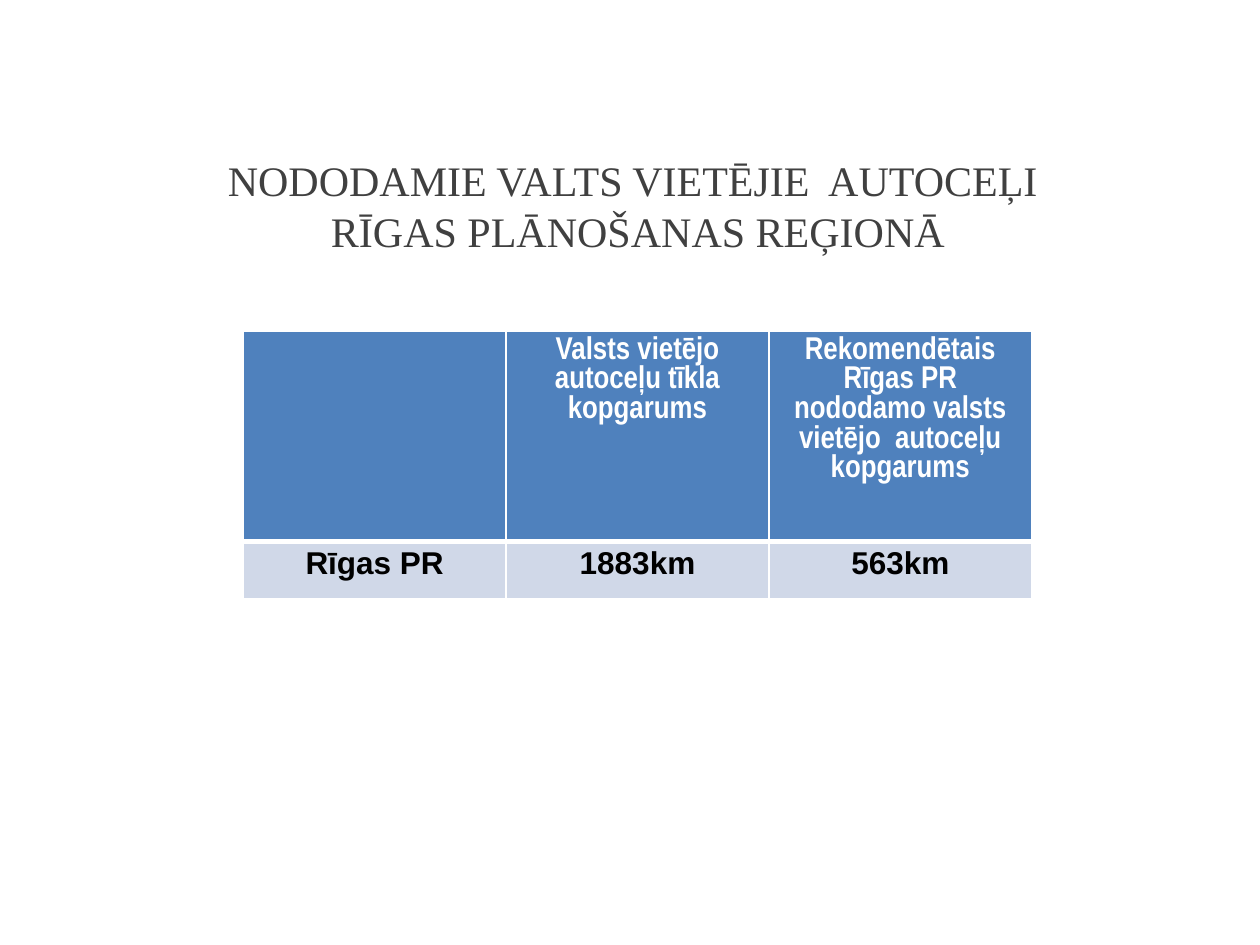
from lxml import etree
from pptx import Presentation
from pptx.dml.color import RGBColor
from pptx.enum import text
from pptx.oxml.ns import qn
from pptx.util import Pt

WHITE = RGBColor(0xFF, 0xFF, 0xFF)
BLACK = RGBColor(0, 0, 0)
GREY = RGBColor(0x40, 0x40, 0x40)
BLUE = RGBColor(0x4F, 0x81, 0xBD)
PALE_BLUE = RGBColor(0xD0, 0xD8, 0xE8)


def add_border(cell, side, width):
    line = etree.SubElement(cell._tc.get_or_add_tcPr(), qn("a:" + side), w=str(Pt(width)))
    fill = etree.SubElement(line, qn("a:solidFill"))
    etree.SubElement(fill, qn("a:srgbClr"), val=str(WHITE))


prs = Presentation()
prs.slide_width, prs.slide_height = Pt(720), Pt(540)
slide = prs.slides.add_slide(prs.slide_layouts[5])

# Title
title = slide.shapes.title
title.left, title.top, title.width, title.height = Pt(105), Pt(83.5), Pt(519), Pt(67.7)
title.text_frame.text = "NODODAMIE VALTS VIETĒJIE  AUTOCEĻI  RĪGAS PLĀNOŠANAS REĢIONĀ"
title.text_frame.vertical_anchor = text.MSO_ANCHOR.MIDDLE
heading = title.text_frame.paragraphs[0]
heading.alignment = text.PP_ALIGN.CENTER
heading.font.name = "Times New Roman"
heading.font.size = Pt(24)
heading.font.color.rgb = GREY

# Road length table: text, font, text colour, fill, height, top and bottom border
rows = [
    (["", "Valsts vietējo autoceļu tīkla kopgarums",
      "Rekomendētais Rīgas PR nododamo valsts vietējo  autoceļu kopgarums"],
     "Arial Narrow", WHITE, BLUE, 120, 1, 3),
    (["Rīgas PR", "1883km", "563km"], "Arial", BLACK, PALE_BLUE, 32.5, 3, 1),
]
roads = slide.shapes.add_table(2, 3, Pt(139), Pt(189.5), Pt(450.6), Pt(152.5)).table
for column in roads.columns:
    column.width = Pt(150.2)

for r, (labels, font, ink, fill, height, top, bottom) in enumerate(rows):
    roads.rows[r].height = Pt(height)
    for c, label in enumerate(labels):
        cell = roads.cell(r, c)
        for side, width in (("lnL", 1), ("lnR", 1), ("lnT", top), ("lnB", bottom)):
            add_border(cell, side, width)
        cell.fill.solid()
        cell.fill.fore_color.rgb = fill
        cell.margin_left = cell.margin_right = Pt(5)
        cell.margin_top = cell.margin_bottom = Pt(2.7)
        cell.text = label
        entry = cell.text_frame.paragraphs[0]
        entry.alignment = text.PP_ALIGN.CENTER
        entry.font.name = font
        entry.font.size = Pt(18)
        entry.font.bold = True
        entry.font.color.rgb = ink

prs.save("out.pptx")
